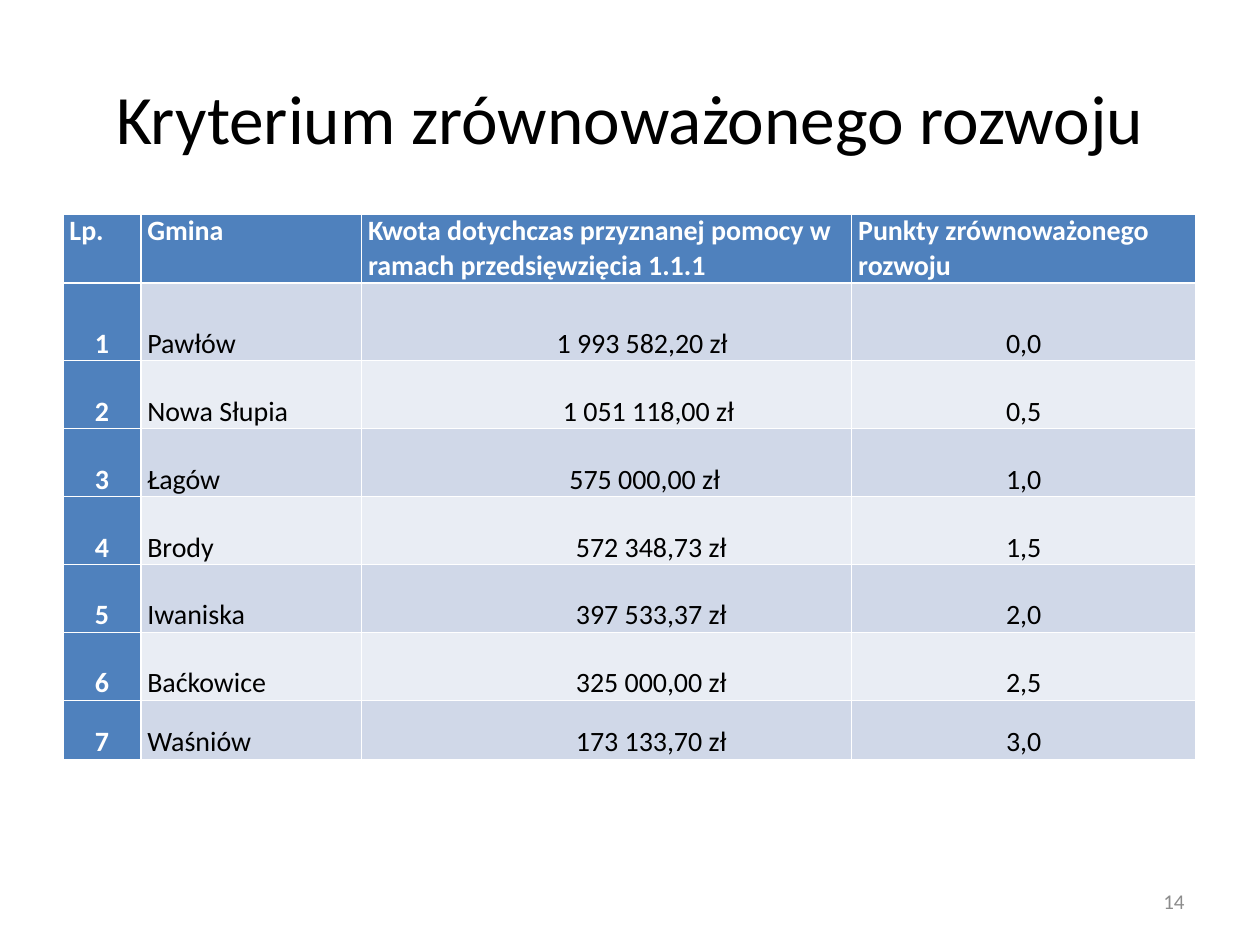
"""Build the slide with the table of sustainable development points."""
from pptx import Presentation
from pptx.dml.color import RGBColor
from pptx.enum.text import MSO_ANCHOR, PP_ALIGN
from pptx.util import Cm, Pt

WHITE = RGBColor(0xFF, 0xFF, 0xFF)
BLACK = RGBColor(0x00, 0x00, 0x00)
GREY = RGBColor(0x8C, 0x8C, 0x8C)
BLUE = RGBColor(0x4F, 0x81, 0xBD)
BAND_DARK = RGBColor(0xD0, 0xD8, 0xE8)
BAND_LIGHT = RGBColor(0xE9, 0xED, 0xF4)

HEADERS = [
    "Lp.",
    "Gmina",
    "Kwota dotychczas przyznanej pomocy w ramach przedsięwzięcia 1.1.1",
    "Punkty zrównoważonego rozwoju",
]
MUNICIPALITIES = [
    ("Pawłów", "1 993 582,20 zł", 3.93),
    ("Nowa Słupia", "1 051 118,00 zł", 4.06),
    ("Łagów", "575 000,00 zł", 4.19),
    ("Brody", "572 348,73 zł", 4.32),
    ("Iwaniska", "397 533,37 zł", 4.32),
    ("Baćkowice", "325 000,00 zł", 4.32),
    ("Waśniów", "173 133,70 zł", 4.32),
]
COLUMN_WIDTHS = [1.57, 4.45, 9.88, 6.93]
ROW_HEIGHTS = [1.37, 1.57] + [1.37] * 5 + [1.19]
CENTRED_COLUMNS = (0, 3)
CELL_MARGINS = {
    "margin_left": Cm(0.13),
    "margin_right": Cm(0.13),
    "margin_top": Cm(0),
    "margin_bottom": Cm(0),
}


def format_paragraph(paragraph, size, color, alignment, bold=False):
    paragraph.alignment = alignment
    font_format = {"name": "Calibri", "size": Pt(size), "bold": bold}
    for attribute, value in font_format.items():
        setattr(paragraph.font, attribute, value)
    paragraph.font.color.rgb = color


presentation = Presentation()
presentation.slide_width = Cm(25.4)
presentation.slide_height = Cm(19.05)
slide = presentation.slides.add_slide(presentation.slide_layouts[5])

title = slide.shapes.title
title_format = {"left": Cm(1.27), "top": Cm(0.76), "width": Cm(22.86), "height": Cm(3.18)}
for attribute, value in title_format.items():
    setattr(title, attribute, value)
title.text_frame.text = "Kryterium zrównoważonego rozwoju"
title.text_frame.vertical_anchor = MSO_ANCHOR.MIDDLE
format_paragraph(title.text_frame.paragraphs[0], 39.6, BLACK, PP_ALIGN.CENTER)

table = slide.shapes.add_table(
    len(ROW_HEIGHTS), len(COLUMN_WIDTHS),
    Cm(1.27), Cm(4.32), Cm(sum(COLUMN_WIDTHS)), Cm(sum(ROW_HEIGHTS)),
).table
table.first_col = True
for column, width in zip(table.columns, COLUMN_WIDTHS):
    column.width = Cm(width)
for row, height in zip(table.rows, ROW_HEIGHTS):
    row.height = Cm(height)

table_texts = [HEADERS]
for number, (name, amount, indent) in enumerate(MUNICIPALITIES, start=1):
    points = f"{(number - 1) / 2:.1f}".replace(".", ",")
    table_texts.append([str(number), name, amount, points])

for row_index, row_texts in enumerate(table_texts):
    for column_index, text in enumerate(row_texts):
        cell = table.cell(row_index, column_index)
        is_header = row_index == 0
        is_heading = is_header or column_index == 0
        is_centred = not is_header and column_index in CENTRED_COLUMNS
        band = BAND_DARK if row_index % 2 else BAND_LIGHT
        cell.fill.solid()
        cell.fill.fore_color.rgb = BLUE if is_heading else band
        for attribute, value in CELL_MARGINS.items():
            setattr(cell, attribute, value)
        cell.vertical_anchor = MSO_ANCHOR.TOP if is_header else MSO_ANCHOR.BOTTOM
        cell.text = text
        format_paragraph(
            cell.text_frame.paragraphs[0], 16,
            WHITE if is_heading else BLACK,
            PP_ALIGN.CENTER if is_centred else PP_ALIGN.LEFT,
            bold=is_heading,
        )

for row_index, (name, amount, indent) in enumerate(MUNICIPALITIES, start=1):
    table.cell(row_index, 2).margin_left = Cm(indent)

slide_number = slide.shapes.add_textbox(Cm(18.21), Cm(17.65), Cm(5.92), Cm(1.02))
slide_number.text_frame.word_wrap = True
slide_number.text_frame.vertical_anchor = MSO_ANCHOR.MIDDLE
slide_number.text_frame.text = "14"
format_paragraph(slide_number.text_frame.paragraphs[0], 12, GREY, PP_ALIGN.RIGHT)

presentation.save("out.pptx")
